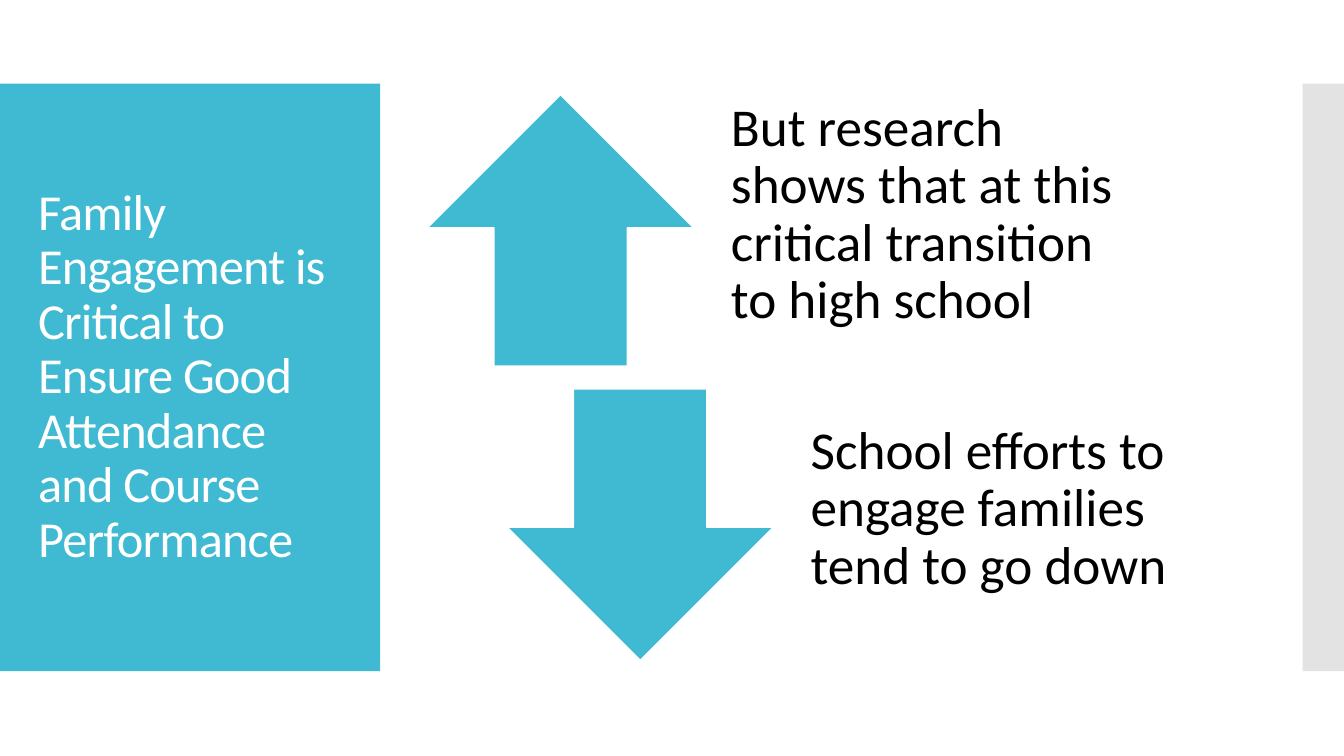
from lxml import etree
from pptx import Presentation
from pptx import util as u
from pptx.dml.color import RGBColor
from pptx.enum import shapes, text
from pptx.oxml.ns import qn

COLORS = {"teal": "40BAD2", "grey": "C8C8C8", "white": "FFFFFF", "black": "000000"}
BAND_TOP, BAND_HEIGHT = 0.83, 5.83
ARROW_WIDTH, ROW_HEIGHT = 2.64, 2.69


def add_block(preset, left, top, width, height, color):
    block = slide.shapes.add_shape(
        preset, u.Inches(left), u.Inches(top), u.Inches(width), u.Inches(height))
    block.shadow.inherit = False
    block.fill.solid()
    block.fill.fore_color.rgb = RGBColor.from_string(COLORS[color])
    block.line.fill.background()
    return block


def add_statement(wording, left, top, width, height, size, color, insets):
    box = slide.shapes.add_textbox(
        u.Inches(left), u.Inches(top), u.Inches(width), u.Inches(height))
    frame = box.text_frame
    frame.word_wrap = True
    frame.vertical_anchor = text.MSO_ANCHOR.MIDDLE
    (frame.margin_left, frame.margin_top,
     frame.margin_right, frame.margin_bottom) = [u.Inches(inset) for inset in insets]
    paragraph = frame.paragraphs[0]
    paragraph.alignment = text.PP_ALIGN.LEFT
    paragraph.line_spacing = 0.9
    run = paragraph.add_run()
    run.text = wording
    run.font.name = "Calibri"
    run.font.size = u.Pt(size)
    run.font.color.rgb = RGBColor.from_string(COLORS[color])
    return run


deck = Presentation()
deck.slide_width, deck.slide_height = u.Inches(13.33), u.Inches(7.5)
slide = deck.slides.add_slide(deck.slide_layouts[6])

rectangle = shapes.MSO_SHAPE.RECTANGLE
add_block(rectangle, 0, BAND_TOP, 3.77, BAND_HEIGHT, "teal")
edge_band = add_block(rectangle, 12.92, BAND_TOP, 0.41, BAND_HEIGHT, "grey")
edge_color = edge_band.fill._xPr.find(qn("a:solidFill"))[0]
etree.SubElement(edge_color, qn("a:alpha"), val="50000")

title = add_statement(
    "Family Engagement is Critical to Ensure Good Attendance and Course Performance",
    0.28, 1.23, 3.22, 5.03, 36, "white", (0.1, 0.05, 0.1, 0.05))
title.font._element.set("spc", "-60")

trends = [
    (shapes.MSO_SHAPE.UP_ARROW, 4.24, 0.94,
     "But research shows that at this critical transition to high school"),
    (shapes.MSO_SHAPE.DOWN_ARROW, 5.03, 3.86,
     "School efforts to engage families tend to go down"),
]
for direction, left, top, wording in trends:
    arrow = add_block(direction, left, top, ARROW_WIDTH, ROW_HEIGHT, "teal")
    arrow.line.color.rgb = RGBColor.from_string(COLORS["white"])
    arrow.line.width = u.Pt(0.85)
    add_statement(wording, left + 2.71, top, 4.48, ROW_HEIGHT, 38, "black",
                  (0.3, 0, 0.3, 0.3))

deck.save("out.pptx")
